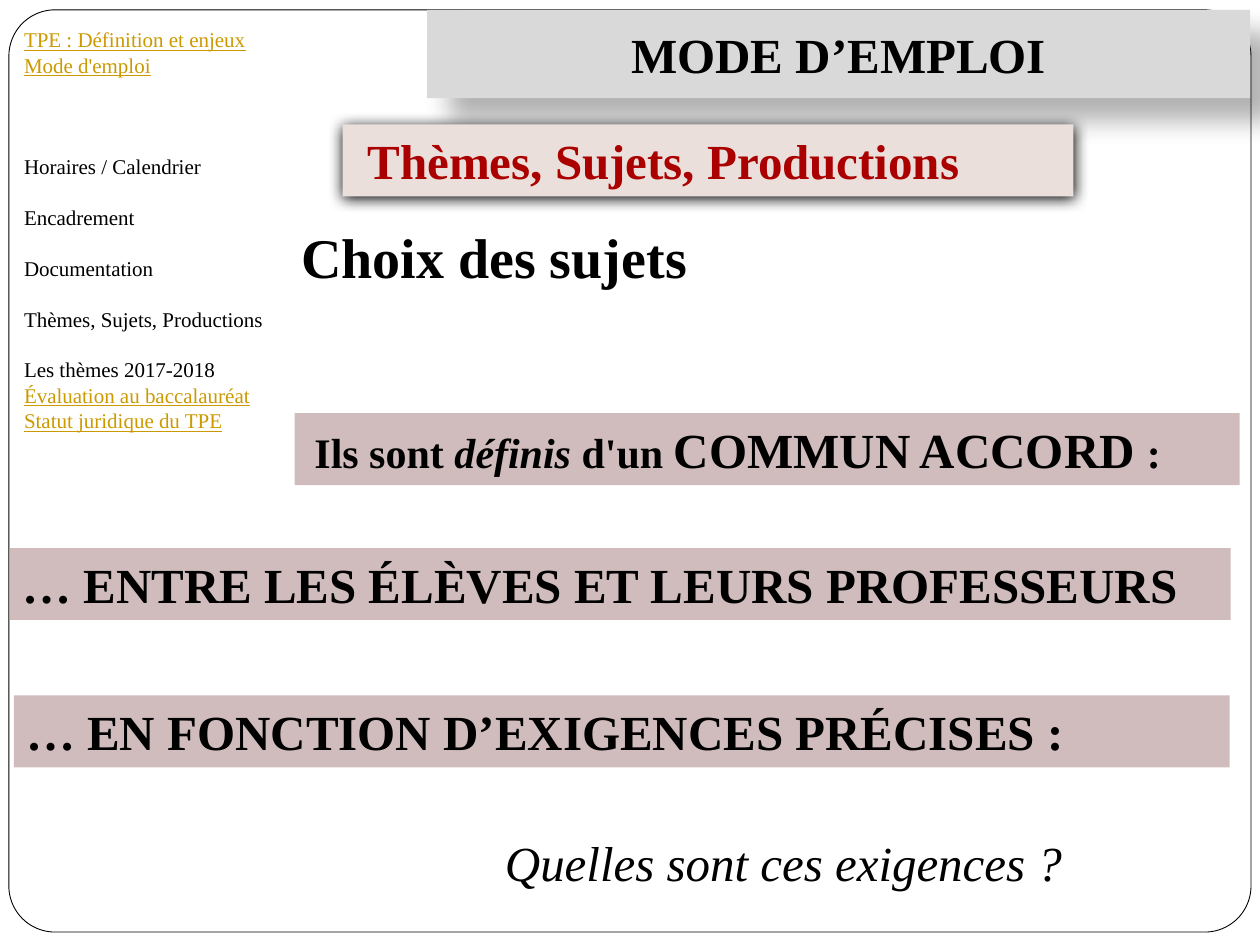
from lxml import etree
from pptx import Presentation
from pptx import util as u
from pptx.dml.color import RGBColor
from pptx.enum import shapes, text
from pptx.oxml.ns import qn

FONT = "Times New Roman"
COLORS = {
    "black": "000000",
    "white": "FFFFFF",
    "link": "CC9900",
    "header": "D9D9D9",
    "band": "D0BCBC",
    "theme": "EBDFDB",
    "red": "AA0000",
}
NAV_LINE = 14.5
# Entry, is it a link, blank lines above it
NAV = [
    ("TPE : Définition et enjeux", True, 0),
    ("Mode d'emploi", True, 0),
    ("Horaires / Calendrier", False, 3),
    ("Encadrement", False, 1),
    ("Documentation", False, 1),
    ("Thèmes, Sujets, Productions", False, 1),
    ("Les thèmes 2017-2018", False, 1),
    ("Évaluation au baccalauréat", True, 0),
    ("Statut juridique du TPE", True, 0),
]


def rgb(name):
    return RGBColor.from_string(COLORS[name])


def place(sp, box):
    sp.left, sp.top, sp.width, sp.height = (u.Cm(v) for v in box)


def style(r, size, color="black", bold=False, italic=False, underline=False):
    f = r.font
    f.name, f.size = FONT, u.Pt(size)
    f.bold, f.italic, f.underline = bold, italic, underline
    f.color.rgb = rgb(color)


def add_shadow(sp, alpha, blur, dist, angle):
    """Outer shadow: opacity in %, blur and distance in points, angle in degrees."""
    effects = sp._element.spPr.find(qn("a:effectLst"))
    if effects is None:
        effects = etree.SubElement(sp._element.spPr, qn("a:effectLst"))
    shadow = etree.SubElement(
        effects, qn("a:outerShdw"), blurRad=str(u.Pt(blur)), dist=str(u.Pt(dist)),
        dir=str(angle * 60000), algn="tl", rotWithShape="0")
    color = etree.SubElement(shadow, qn("a:srgbClr"), val=COLORS["black"])
    etree.SubElement(color, qn("a:alpha"), val=str(alpha * 1000))


def add_frame(s):
    """Rounded page border, sent behind everything else."""
    sp = s.shapes.add_shape(shapes.MSO_SHAPE.ROUNDED_RECTANGLE, 0, 0, 0, 0)
    place(sp, (0.18, 0.2, 25.04, 18.59))
    sp.adjustments[0] = 0.05
    sp.shadow.inherit = False
    sp.fill.solid()
    sp.fill.fore_color.rgb = rgb("white")
    sp.line.color.rgb = rgb("black")
    sp.line.width = u.Pt(0.5)
    s.shapes._spTree.insert(2, sp._element)


def set_title(s, words):
    sp = s.shapes.title
    place(sp, (8.61, 0.2, 16.59, 1.78))
    sp.fill.solid()
    sp.fill.fore_color.rgb = rgb("header")
    add_shadow(sp, 30, 15, 18, 45)
    tf = sp.text_frame
    tf.text = words
    tf.auto_size = text.MSO_AUTO_SIZE.NONE
    tf.vertical_anchor = text.MSO_ANCHOR.MIDDLE
    p = tf.paragraphs[0]
    p.alignment = text.PP_ALIGN.CENTER
    style(p.runs[0], 28, bold=True)


def set_navigation(s):
    sp = s.placeholders[1]
    place(sp, (0.23, 0.41, 5.54, 8.46))
    tf = sp.text_frame
    tf.text = "\n".join(words for words, _, _ in NAV)
    tf.auto_size = text.MSO_AUTO_SIZE.NONE
    for p, (_, link, blanks) in zip(tf.paragraphs, NAV):
        p.line_spacing = u.Pt(NAV_LINE)
        p.space_before = u.Pt(NAV_LINE * blanks)
        pPr = p._p.get_or_add_pPr()
        pPr.set("marL", "0")
        pPr.set("indent", "0")
        etree.SubElement(pPr, qn("a:buNone"))
        style(p.runs[0], 12, "link" if link else "black", underline=link)


def fill_line(sp, runs, margin=0.25):
    """Write one left-aligned line from (words, size, font options) runs."""
    tf = sp.text_frame
    tf.word_wrap = True
    tf.margin_left = u.Cm(margin)
    tf.vertical_anchor = text.MSO_ANCHOR.TOP
    p = tf.paragraphs[0]
    p.alignment = text.PP_ALIGN.LEFT
    for words, size, options in runs:
        r = p.add_run()
        r.text = words
        style(r, size, **options)


def add_band(s, box, runs, fill="band", margin=0.25):
    sp = s.shapes.add_shape(shapes.MSO_SHAPE.RECTANGLE, 0, 0, 0, 0)
    place(sp, box)
    sp.shadow.inherit = False
    sp.fill.solid()
    sp.fill.fore_color.rgb = rgb(fill)
    sp.line.fill.background()
    fill_line(sp, runs, margin)
    return sp


def add_label(s, box, runs):
    sp = s.shapes.add_textbox(0, 0, 0, 0)
    place(sp, box)
    fill_line(sp, runs)


def main():
    prs = Presentation()
    prs.slide_width, prs.slide_height = u.Cm(25.4), u.Cm(19.05)
    s = prs.slides.add_slide(prs.slide_layouts[1])
    bold = {"bold": True}

    add_frame(s)
    set_title(s, "MODE D’EMPLOI")
    set_navigation(s)

    accord = add_band(s, (5.94, 8.33, 19.05, 1.45), [
        ("Ils sont ", 24, bold),
        ("définis", 24, {"bold": True, "italic": True}),
        (" d'un ", 24, bold),
        ("COMMUN ACCORD ", 28, bold),
        (":", 24, bold),
    ], margin=0.4)
    accord.text_frame.vertical_anchor = text.MSO_ANCHOR.MIDDLE
    add_label(s, (5.82, 4.37, 11.05, 1.63), [("Choix des sujets", 32, bold)])
    add_band(s, (0.28, 14.02, 24.51, 1.45),
             [("… EN FONCTION D’EXIGENCES PRÉCISES :", 28, bold)])
    add_band(s, (0.2, 11.05, 24.61, 1.45),
             [("… ENTRE LES ÉLÈVES ET LEURS PROFESSEURS", 28, bold)])
    add_label(s, (9.93, 16.66, 15.09, 1.45),
              [("Quelles sont ces exigences ?", 28, {"italic": True})])
    theme = add_band(s, (6.91, 2.51, 14.73, 1.45),
                     [("Thèmes, Sujets, Productions", 28, {"bold": True, "color": "red"})],
                     fill="theme", margin=0.5)
    add_shadow(theme, 100, 8.5, 1, 90)

    prs.save("out.pptx")


if __name__ == "__main__":
    main()
